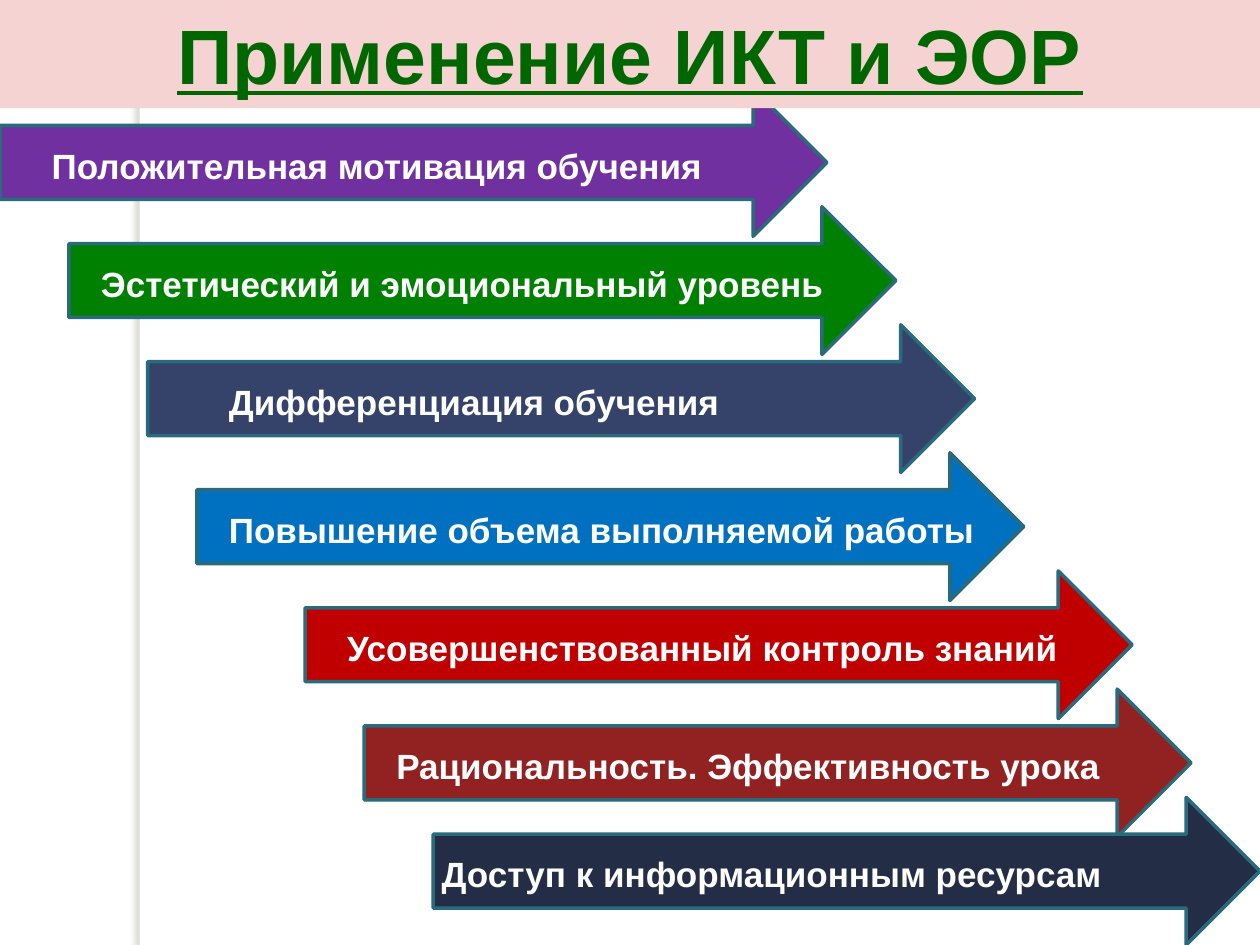
from dataclasses import dataclass

from lxml import etree
from pptx import Presentation
from pptx import util as u
from pptx.dml.color import RGBColor
from pptx.enum import shapes, text
from pptx.oxml.ns import qn

COLUMNS, ROWS = 128, 96
CELL = u.Inches(10 / COLUMNS)


@dataclass(frozen=True)
class Theme:
    font: str = "Arial"
    title_size: int = 44
    label_size: int = 20
    title_color: str = "006600"
    title_band: str = "F5D3D3"
    light: str = "FFFFFF"
    outline: str = "296B7C"
    strip_shadow: str = "736F63"


THEME = Theme()

BENEFITS = [
    ("Положительная мотивация обучения", "7030A0", 0, 9, 4, 84.4),
    ("Эстетический и эмоциональный уровень", "008000", 7, 21, 2, 84.4),
    ("Дифференциация обучения", "35436A", 15, 33, 7, 66),
    ("Повышение объема выполняемой работы", "0070C0", 20, 46, 2, 84.4),
    ("Усовершенствованный контроль знаний", "C00000", 31, 58, 3, 84.4),
    ("Рациональность. Эффективность урока", "922222", 37, 70, 2, 84.4),
    ("Доступ к информационным ресурсам", "242D46", 44, 81, -0.4, 84.4),
]


def cells(*box):
    return [round(length * CELL) for length in box]


def write(frame, words, size, color, align=text.PP_ALIGN.LEFT, underline=False):
    frame.word_wrap = True
    paragraph = frame.paragraphs[0]
    paragraph.alignment = align
    run = paragraph.add_run()
    run.text = words
    run.font.name = THEME.font
    run.font.size = u.Pt(size)
    run.font.bold = True
    run.font.underline = underline
    run.font.color.rgb = RGBColor.from_string(color)


def paint(part, fill, line=None):
    part.shadow.inherit = False
    part.fill.solid()
    part.fill.fore_color.rgb = RGBColor.from_string(fill)
    if line:
        part.line.color.rgb = RGBColor.from_string(line)
        part.line.width = u.Pt(2)
    else:
        part.line.fill.background()


def add_strip(slide, box):
    strip = slide.shapes.add_shape(shapes.MSO_SHAPE.RECTANGLE, *cells(*box))
    paint(strip, THEME.light)
    effects = strip.fill._xPr.find(qn("a:effectLst"))
    shadow = etree.SubElement(effects, qn("a:outerShdw"), blurRad=str(u.Pt(3)),
                              dist=str(u.Pt(3)), dir="10800000", rotWithShape="0")
    color = etree.SubElement(shadow, qn("a:srgbClr"), val=THEME.strip_shadow)
    etree.SubElement(color, qn("a:alpha"), val="25000")


def add_benefit(slide, box, words, fill, indent, label_width):
    left, top, width, height = box
    arrow = slide.shapes.add_shape(shapes.MSO_SHAPE.RIGHT_ARROW, *cells(*box))
    paint(arrow, fill, THEME.outline)
    label = slide.shapes.add_textbox(
        *cells(left + indent, top + height / 3, label_width, 5.6))
    write(label.text_frame, words, THEME.label_size, THEME.light)
    label.text_frame.auto_size = text.MSO_AUTO_SIZE.SHAPE_TO_FIT_TEXT


def add_title(slide, box, words):
    title = slide.shapes.title
    title.left, title.top, title.width, title.height = cells(*box)
    title.fill.solid()
    title.fill.fore_color.rgb = RGBColor.from_string(THEME.title_band)
    write(title.text_frame, words, THEME.title_size, THEME.title_color,
          align=text.PP_ALIGN.CENTER, underline=True)
    title.text_frame.vertical_anchor = text.MSO_ANCHOR.MIDDLE
    title.text_frame.auto_size = text.MSO_AUTO_SIZE.NONE
    slide.shapes._spTree.append(title._element)


def main():
    deck = Presentation()
    deck.slide_width, deck.slide_height = cells(COLUMNS, ROWS)
    slide = deck.slides.add_slide(deck.slide_layouts[5])
    add_strip(slide, (14.2, 0, 1, ROWS))
    for words, fill, column, row, indent, label_width in BENEFITS:
        add_benefit(slide, (column, row, 84, 15), words, fill, indent, label_width)
    add_title(slide, (0, 0, COLUMNS, 11), "Применение ИКТ и ЭОР")
    deck.save("out.pptx")


if __name__ == "__main__":
    main()
